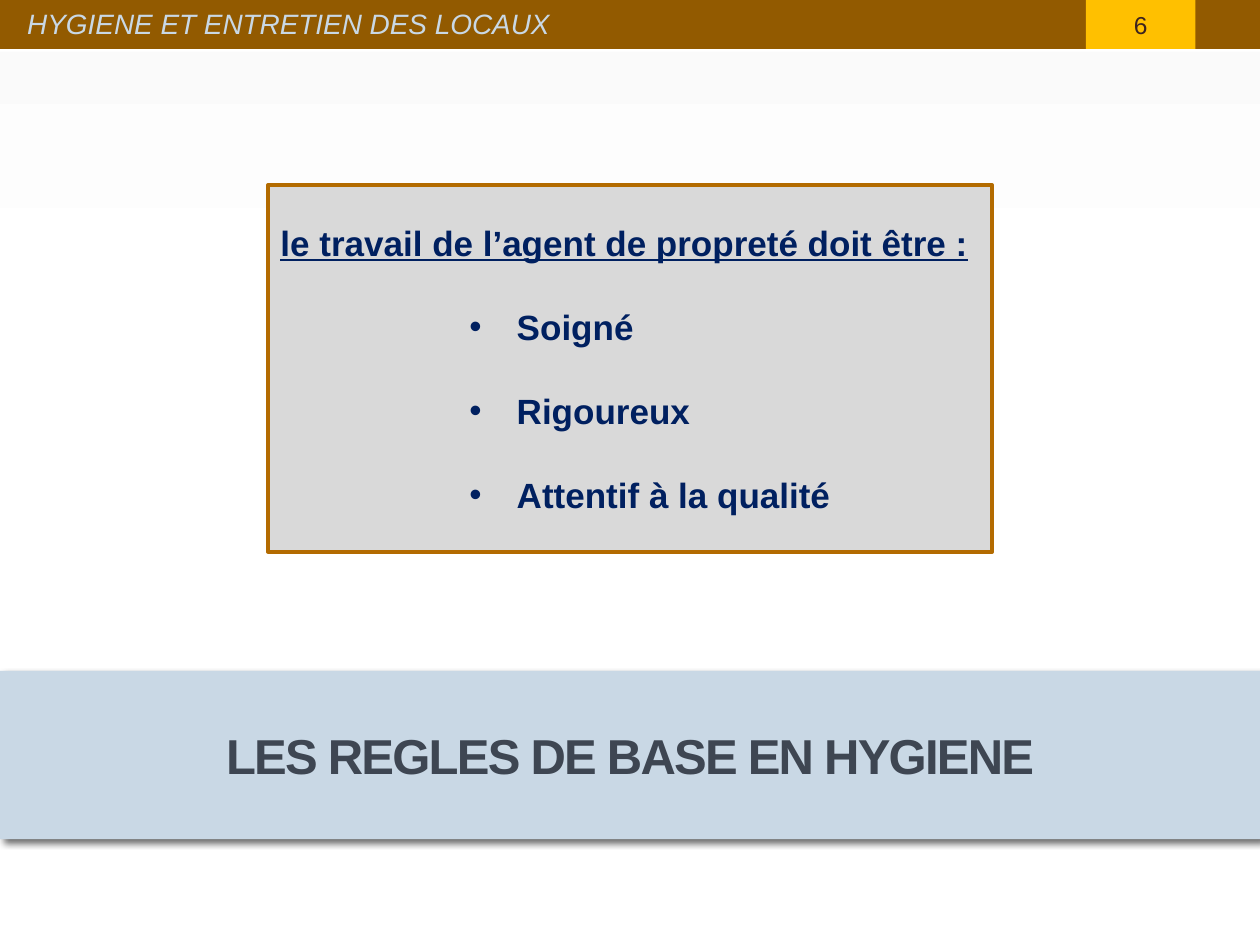
from dataclasses import dataclass

from lxml import etree
from pptx import Presentation
from pptx.dml.color import RGBColor
from pptx.enum.shapes import MSO_SHAPE
from pptx.enum.text import MSO_ANCHOR, MSO_AUTO_SIZE, PP_ALIGN
from pptx.oxml import parse_xml
from pptx.oxml.ns import nsdecls, qn
from pptx.util import Pt

RECT = MSO_SHAPE.RECTANGLE
MIDDLE = MSO_ANCHOR.MIDDLE
NO_FIT = MSO_AUTO_SIZE.NONE
LEFT, CENTER = PP_ALIGN.LEFT, PP_ALIGN.CENTER


@dataclass(frozen=True)
class Theme:
    font: str = "Arial"
    white: str = "FFFFFF"
    mist: str = "FAFAFA"
    brown: str = "925A00"
    yellow: str = "FFC000"
    number: str = "3C231F"
    pale: str = "C9D8E5"
    slate: str = "3E4652"
    panel: str = "D9D9D9"
    border: str = "B36B00"
    navy: str = "002060"
    number_size: int = 14
    header_size: int = 16
    body_size: int = 20
    title_size: int = 28


class Deck:
    """Builds styled elements on the current slide, with lengths in points."""

    def __init__(self, theme, width, height):
        self.theme = theme
        self.prs = Presentation()
        self.prs.slide_width, self.prs.slide_height = Pt(width), Pt(height)
        self.s = None

    def add_slide(self, top, bottom, fade_end):
        self.s = self.prs.slides.add_slide(self.prs.slide_layouts[5])
        fill = self.s.background.fill
        fill.gradient()
        fill.gradient_angle = 270
        stops = zip(fill.gradient_stops, (top, bottom), (0, fade_end))
        for stop, color, position in stops:
            stop.color.rgb = RGBColor.from_string(color)
            stop.position = position

    def fill(self, sp, color):
        sp.fill.solid()
        sp.fill.fore_color.rgb = RGBColor.from_string(color)
        sp.shadow.inherit = False

    def set_text(self, sp, lines, size, color, align=LEFT, bold=False, italic=False):
        tf = sp.text_frame
        tf.text = "\n".join(lines)
        tf.word_wrap = True
        tf.auto_size = NO_FIT
        tf.vertical_anchor = MIDDLE
        for p in tf.paragraphs:
            p.alignment = align
            for r in p.runs:
                r.font.name = self.theme.font
                r.font.size = Pt(size)
                r.font.color.rgb = RGBColor.from_string(color)
                r.font.bold, r.font.italic = bold, italic
        return tf

    def rect(self, x, y, w, h, color, border=None):
        sp = self.s.shapes.add_shape(RECT, Pt(x), Pt(y), Pt(w), Pt(h))
        self.fill(sp, color)
        if border:
            sp.line.color.rgb = RGBColor.from_string(border)
            sp.line.width = Pt(2.08)
        else:
            sp.line.fill.background()
        return sp

    def label(self, x, y, w, h, text, size, color, italic=False):
        sp = self.s.shapes.add_textbox(Pt(x), Pt(y), Pt(w), Pt(h))
        self.set_text(sp, [text], size, color, italic=italic)

    def title(self, x, y, w, h, text):
        t = self.theme
        sp = self.s.shapes.title
        sp.left, sp.top, sp.width, sp.height = Pt(x), Pt(y), Pt(w), Pt(h)
        self.fill(sp, t.pale)
        shadow = parse_xml(
            f'<a:outerShdw {nsdecls("a")} blurRad="{Pt(4)}" dist="{Pt(3)}" '
            'dir="2700000" algn="tl" rotWithShape="0"><a:srgbClr val="000000">'
            '<a:alpha val="59000"/></a:srgbClr></a:outerShdw>')
        sp.element.spPr.find(qn("a:effectLst")).append(shadow)
        tf = self.set_text(sp, [text], t.title_size, t.slate, CENTER, bold=True)
        tf.paragraphs[0].runs[0]._r.get_or_add_rPr().set("spc", "-100")

    def bullet_panel(self, x, y, w, h, heading, items):
        t = self.theme
        sp = self.rect(x, y, w, h, t.panel, t.border)
        tf = self.set_text(sp, [heading, *items], t.body_size, t.navy, bold=True)
        first, *bullets = tf.paragraphs
        first.runs[0].font.underline = True
        for p in bullets:
            p.level = 3
            p.line_spacing = 2.0
            pPr = p._p.get_or_add_pPr()
            pPr.set("marL", str(Pt(135)))
            pPr.set("indent", str(Pt(-27)))
            etree.SubElement(pPr, qn("a:buFont"), typeface=t.font)
            etree.SubElement(pPr, qn("a:buChar"), char="•")


def main():
    t = Theme()
    width, height, bar = 720, 540, 28
    deck = Deck(t, width, height)
    deck.add_slide(t.mist, t.white, 0.33)
    deck.rect(0, 11.5, width, 18, t.white)
    deck.rect(0, 0, width, bar, t.brown)
    number = deck.rect(620.6, 0, 62.6, bar, t.yellow)
    deck.set_text(number, ["6"], t.number_size, t.number, CENTER)
    deck.label(8.5, 1, 590, 25, "HYGIENE ET ENTRETIEN DES LOCAUX",
               t.header_size, t.pale, italic=True)
    deck.title(0, 383.3, width, 96.3, "LES REGLES DE BASE EN HYGIENE")
    deck.bullet_panel(153.2, 105.7, 413.8, 209.7,
                      "le travail de l’agent de propreté doit être :",
                      ["Soigné", "Rigoureux", "Attentif à la qualité"])
    deck.prs.save("out.pptx")


if __name__ == "__main__":
    main()
